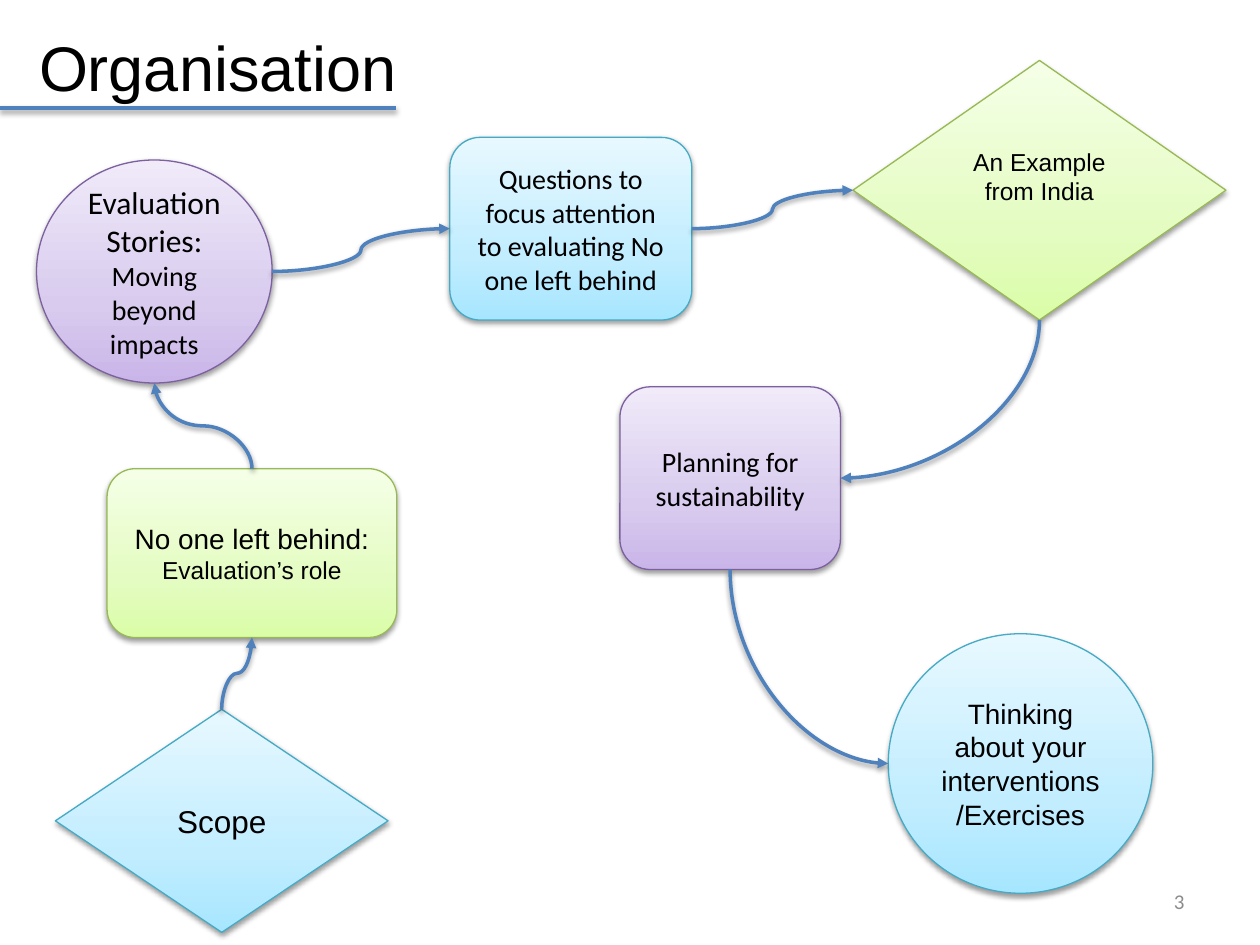
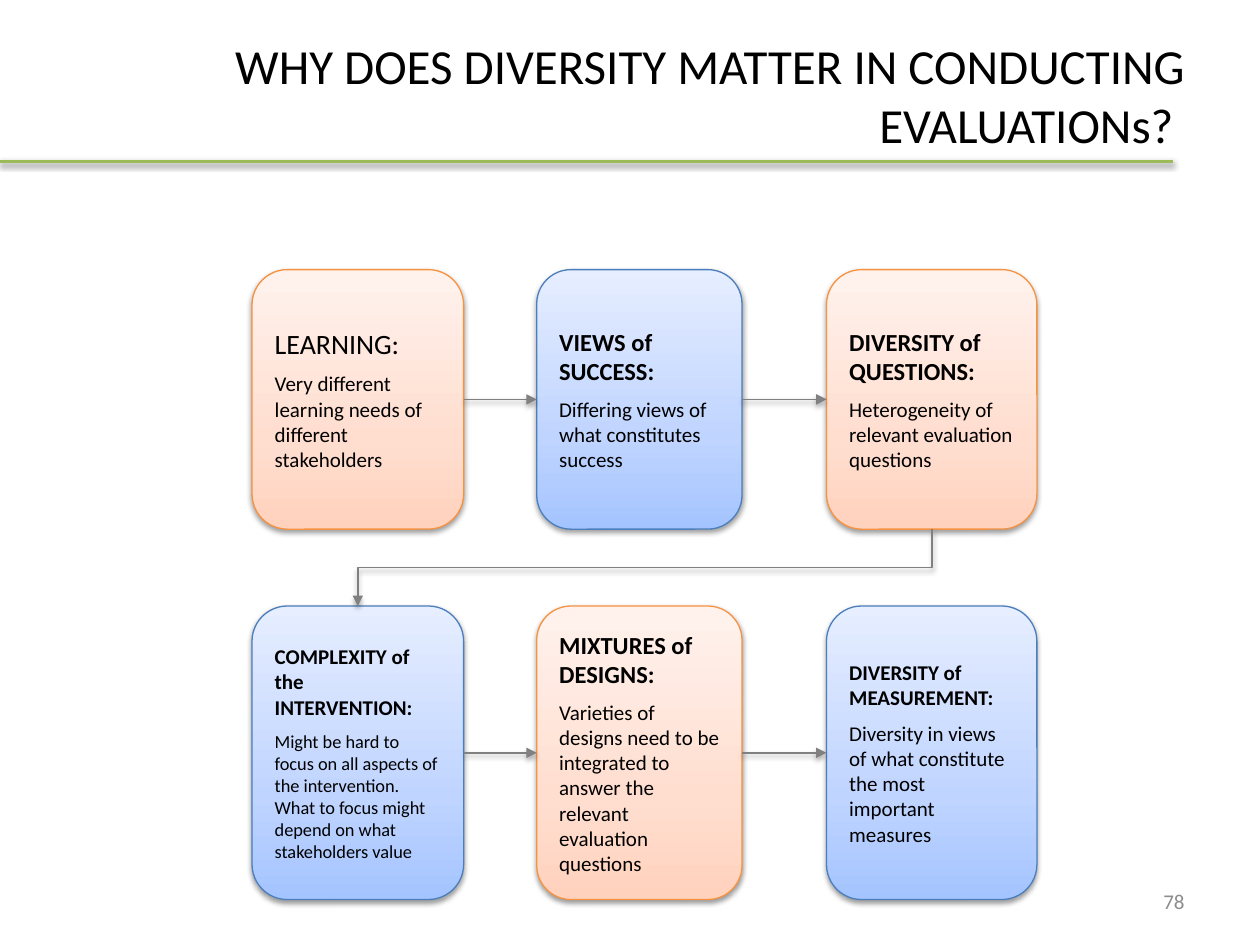
from copy import deepcopy
from dataclasses import dataclass
from typing import NamedTuple

from lxml import etree
from pptx import Presentation
from pptx import util as u
from pptx.dml.color import RGBColor
from pptx.enum import shapes, text
from pptx.oxml import ns

WIDE, HIGH = u.Inches(10), u.Inches(7.5)
COL, ROW = WIDE / 100, HIGH / 75

BLACK = RGBColor(0x00, 0x00, 0x00)
GREY = RGBColor(0x80, 0x80, 0x80)
FAINT = RGBColor(0x8C, 0x8C, 0x8C)
BLUE = RGBColor(0x4F, 0x81, 0xBD)
GREEN = RGBColor(0x9B, 0xBB, 0x59)

KIND = shapes.MSO_SHAPE
LINK = shapes.MSO_CONNECTOR
ALIGN = text.PP_ALIGN
ANCHOR = text.MSO_ANCHOR
SIDES = {"top": (0.5, 0), "left": (0, 0.5), "bottom": (0.5, 1), "right": (1, 0.5)}


class Tint(NamedTuple):
    deep: RGBColor
    mid: RGBColor
    pale: RGBColor
    edge: RGBColor


AQUA = Tint(RGBColor(0xA7, 0xE6, 0xFF), RGBColor(0xC1, 0xED, 0xFF),
            RGBColor(0xE7, 0xF8, 0xFF), RGBColor(0x46, 0xAA, 0xC5))
LIME = Tint(RGBColor(0xDA, 0xFD, 0xA7), RGBColor(0xE4, 0xFC, 0xC2),
            RGBColor(0xF5, 0xFF, 0xE7), RGBColor(0x98, 0xB9, 0x55))
LILAC = Tint(RGBColor(0xC9, 0xB5, 0xE8), RGBColor(0xD8, 0xCB, 0xEE),
             RGBColor(0xF0, 0xEA, 0xF9), RGBColor(0x7D, 0x60, 0xA0))
PEACH = Tint(RGBColor(0xFF, 0xD2, 0xBD), RGBColor(0xFF, 0xDE, 0xD0),
             RGBColor(0xFF, 0xF2, 0xED), RGBColor(0xF6, 0x92, 0x40))
SKY = Tint(RGBColor(0xA4, 0xC4, 0xFF), RGBColor(0xBF, 0xD4, 0xFF),
           RGBColor(0xE6, 0xEE, 0xFF), RGBColor(0x4B, 0x7E, 0xBC))


class Spot(NamedTuple):
    x: float
    y: float


class Area(NamedTuple):
    left: float
    top: float
    wide: float
    high: float

    def emu(self) -> tuple:
        return (u.Emu(round(self.left * COL)), u.Emu(round(self.top * ROW)),
                u.Emu(round(self.wide * COL)), u.Emu(round(self.high * ROW)))

    def side(self, name: str) -> Spot:
        across, down = SIDES[name]
        return Spot(self.left + across * self.wide, self.top + down * self.high)


class Pen(NamedTuple):
    color: RGBColor
    width: float
    alpha: int = 38
    drop: float = 1.6


class Run(NamedTuple):
    text: str
    size: float
    bold: bool = False


@dataclass
class Node:
    kind: KIND
    area: Area
    tint: Tint
    paras: list
    font: str = "Calibri"
    align: ALIGN = ALIGN.CENTER
    after: float = 0
    lift: float = 0


@dataclass
class Curve:
    start: str
    leave: str
    end: str
    enter: str
    preset: str = "curvedConnector3"


FLOW = {
    "scope": Node(KIND.FLOWCHART_DECISION, Area(4.4, 56.3, 26.4, 17.7), AQUA,
                  [[Run("Scope", 18)]], "Arial"),
    "role": Node(KIND.ROUNDED_RECTANGLE, Area(8.5, 37.2, 23, 13.4), LIME,
                 [[Run("No one left behind: ", 16), Run("Evaluation’s role", 14)]], "Arial"),
    "stories": Node(KIND.OVAL, Area(2.9, 12.7, 18.7, 17.7), LILAC,
                    [[Run("Evaluation Stories: ", 18), Run("Moving beyond impacts", 16)]]),
    "india": Node(KIND.DIAMOND, Area(67.7, 4.8, 29.6, 20.6), LIME,
                  [[Run("An Example from India", 14)]], "Arial", lift=16),
    "plan": Node(KIND.ROUNDED_RECTANGLE, Area(49.2, 30.7, 17.5, 14.5), LILAC,
                 [[Run("Planning for sustainability", 16)]]),
    "think": Node(KIND.OVAL, Area(70.5, 50.3, 21, 20.6), AQUA,
                  [[Run("Thinking about your interventions", 16)],
                   [Run("/Exercises", 16)]], "Arial"),
    "focus": Node(KIND.ROUNDED_RECTANGLE, Area(35.7, 10.9, 19.2, 14.5), AQUA,
                  [[Run("Questions to focus attention to evaluating No one left behind", 16)]]),
}
CURVES = [
    Curve("scope", "top", "role", "bottom"),
    Curve("role", "top", "stories", "bottom"),
    Curve("stories", "right", "focus", "left"),
    Curve("focus", "right", "india", "left"),
    Curve("india", "bottom", "plan", "right", "curvedConnector2"),
    Curve("plan", "bottom", "think", "left", "curvedConnector2"),
]

COLS = [(20, 16.8), (42.6, 16.3), (65.6, 16.7)]
ROWS = [(21.4, 20.6), (48.1, 23.3)]
CARDS = [
    [(Run("LEARNING:", 16),
      Run("Very different learning needs of different stakeholders", 12)),
     (Run("VIEWS of SUCCESS:", 14, True),
      Run("Differing views of what constitutes success", 12)),
     (Run("DIVERSITY of QUESTIONS:", 14, True),
      Run("Heterogeneity of relevant evaluation questions", 12))],
    [(Run("COMPLEXITY of the INTERVENTION:", 12, True),
      Run("Might be hard to focus on all aspects of the intervention. What to "
          "focus might depend on what stakeholders value", 10.5)),
     (Run("MIXTURES of DESIGNS:", 14, True),
      Run("Varieties of designs need to be integrated to answer the relevant "
          "evaluation questions", 12)),
     (Run("DIVERSITY of MEASUREMENT:", 12, True),
      Run("Diversity in views of what constitute the most important measures", 12))],
]


def apply(item, values: dict) -> None:
    for name, value in values.items():
        setattr(item, name, value)


def write(frame, paras: list, font: str, color: RGBColor, form: dict) -> None:
    for i, runs in enumerate(paras):
        para = frame.paragraphs[0] if i == 0 else frame.add_paragraph()
        apply(para, form)
        for part in runs:
            run = para.add_run()
            run.text = part.text
            apply(run.font, {"name": font, "size": u.Pt(part.size), "bold": part.bold})
            run.font.color.rgb = color


def shade(item, alpha: int = 38, drop: float = 1.6) -> None:
    props = item._element.spPr
    for old in props.findall(ns.qn("a:effectLst")):
        props.remove(old)
    glow = etree.SubElement(
        etree.SubElement(props, ns.qn("a:effectLst")), ns.qn("a:outerShdw"),
        blurRad=str(u.Pt(3.1)), dist=str(u.Pt(drop)), dir="5400000", rotWithShape="0")
    color = etree.SubElement(glow, ns.qn("a:srgbClr"), val=str(BLACK))
    etree.SubElement(color, ns.qn("a:alpha"), val=str(alpha * 1000))


def blend(fill, shape, tint: Tint) -> None:
    fill.gradient()
    fill.gradient_angle = 90
    stops = shape._element.spPr.find(".//" + ns.qn("a:gsLst"))
    stops.insert(1, deepcopy(stops[0]))
    for stop, place, color in zip(fill.gradient_stops, (0, 0.35, 1), tint):
        stop.position = place
        stop.color.rgb = color


def draw(slide, node: Node):
    shape = slide.shapes.add_shape(node.kind, *node.area.emu())
    shape.shadow.inherit = False
    blend(shape.fill, shape, node.tint)
    shape.line.color.rgb = node.tint.edge
    shape.line.width = u.Pt(0.75)
    shade(shape)
    frame = shape.text_frame
    apply(frame, {"word_wrap": True, "vertical_anchor": ANCHOR.MIDDLE,
                  "margin_bottom": u.Pt(3.6 + node.lift)})
    write(frame, node.paras, node.font, BLACK,
          {"alignment": node.align, "space_after": u.Pt(node.after)})
    return shape


def ink(line, pen: Pen, arrow: bool = True) -> None:
    line.line.color.rgb = pen.color
    line.line.width = u.Pt(pen.width)
    if arrow:
        etree.SubElement(line.line._get_or_add_ln(), ns.qn("a:tailEnd"), type="triangle")
    shade(line, pen.alpha, pen.drop)


def span(slide, kind: LINK, start: Spot, end: Spot):
    ends = (start.x * COL, start.y * ROW, end.x * COL, end.y * ROW)
    return slide.shapes.add_connector(kind, *(u.Emu(round(v)) for v in ends))


def upright(slide, kind: LINK, start: Spot, end: Spot):
    run, fall = end.x - start.x, end.y - start.y
    turn = 90 if run * fall < 0 else 270
    sign = 1 if turn == 90 else -1
    half = Spot(sign * fall / 2, -sign * run / 2)
    mid = Spot((start.x + end.x) / 2, (start.y + end.y) / 2)
    line = span(slide, kind, Spot(mid.x - half.x, mid.y - half.y),
                Spot(mid.x + half.x, mid.y + half.y))
    line._element.spPr.xfrm.rot = float(turn)
    return line


def head(slide, area: Area, words: Run, font: str, form: dict, wrap: bool) -> None:
    title = slide.shapes.title
    apply(title, dict(zip(("left", "top", "width", "height"), area.emu())))
    apply(title.text_frame, {"word_wrap": wrap, "vertical_anchor": ANCHOR.TOP,
                             "auto_size": text.MSO_AUTO_SIZE.NONE})
    write(title.text_frame, [[words]], font, BLACK, form)


def rule(slide, right: float, level: float, pen: Pen) -> None:
    ink(span(slide, LINK.STRAIGHT, Spot(right, level), Spot(0, level)), pen, False)


def number(slide, page: str) -> None:
    box = slide.shapes.add_textbox(*Area(71.7, 69.5, 23.3, 4).emu())
    apply(box.text_frame, {"word_wrap": True, "vertical_anchor": ANCHOR.MIDDLE})
    write(box.text_frame, [[Run(page, 12)]], "Calibri", FAINT, {"alignment": ALIGN.RIGHT})


def outline(slide) -> None:
    head(slide, Area(2.1, 1.8, 31, 12.5), Run("Organisation", 36), "Arial",
         {"alignment": ALIGN.LEFT}, False)
    for node in FLOW.values():
        draw(slide, node)
    for curve in CURVES:
        start = FLOW[curve.start].area.side(curve.leave)
        end = FLOW[curve.end].area.side(curve.enter)
        trace = span if curve.leave == "right" else upright
        line = trace(slide, LINK.CURVE, start, end)
        line._element.spPr.find(ns.qn("a:prstGeom")).set("prst", curve.preset)
        ink(line, Pen(BLUE, 2))
    rule(slide, 31.4, 8.6, Pen(BLUE, 2.25))
    number(slide, "3")


def reasons(slide) -> None:
    head(slide, Area(5, 2.3, 90, 20.8),
         Run("WHY DOES DIVERSITY MATTER IN CONDUCTING EVALUATIONs? ", 28),
         "Calibri", {"alignment": ALIGN.RIGHT}, True)
    pen = Pen(GREY, 1, 35, 1.8)
    areas = [[Area(left, top, wide, high) for left, wide in COLS] for top, high in ROWS]
    for r, cards in enumerate(CARDS):
        boxes = [draw(slide, Node(KIND.ROUNDED_RECTANGLE, areas[r][c],
                                  SKY if (r + c) % 2 else PEACH,
                                  [[part] for part in card], align=ALIGN.LEFT, after=6))
                 for c, card in enumerate(cards)]
        for c in range(len(boxes) - 1):
            line = span(slide, LINK.STRAIGHT, areas[r][c].side("right"),
                        areas[r][c + 1].side("left"))
            line.begin_connect(boxes[c], 3)
            line.end_connect(boxes[c + 1], 1)
            ink(line, pen)
    ink(upright(slide, LINK.ELBOW, areas[0][-1].side("bottom"),
                areas[1][0].side("top")), pen)
    rule(slide, 93.1, 12.8, Pen(GREEN, 2))
    number(slide, "78")


def main() -> None:
    deck = Presentation()
    apply(deck, {"slide_width": WIDE, "slide_height": HIGH})
    for build in (outline, reasons):
        build(deck.slides.add_slide(deck.slide_layouts[5]))
    deck.save("out.pptx")


if __name__ == "__main__":
    main()
